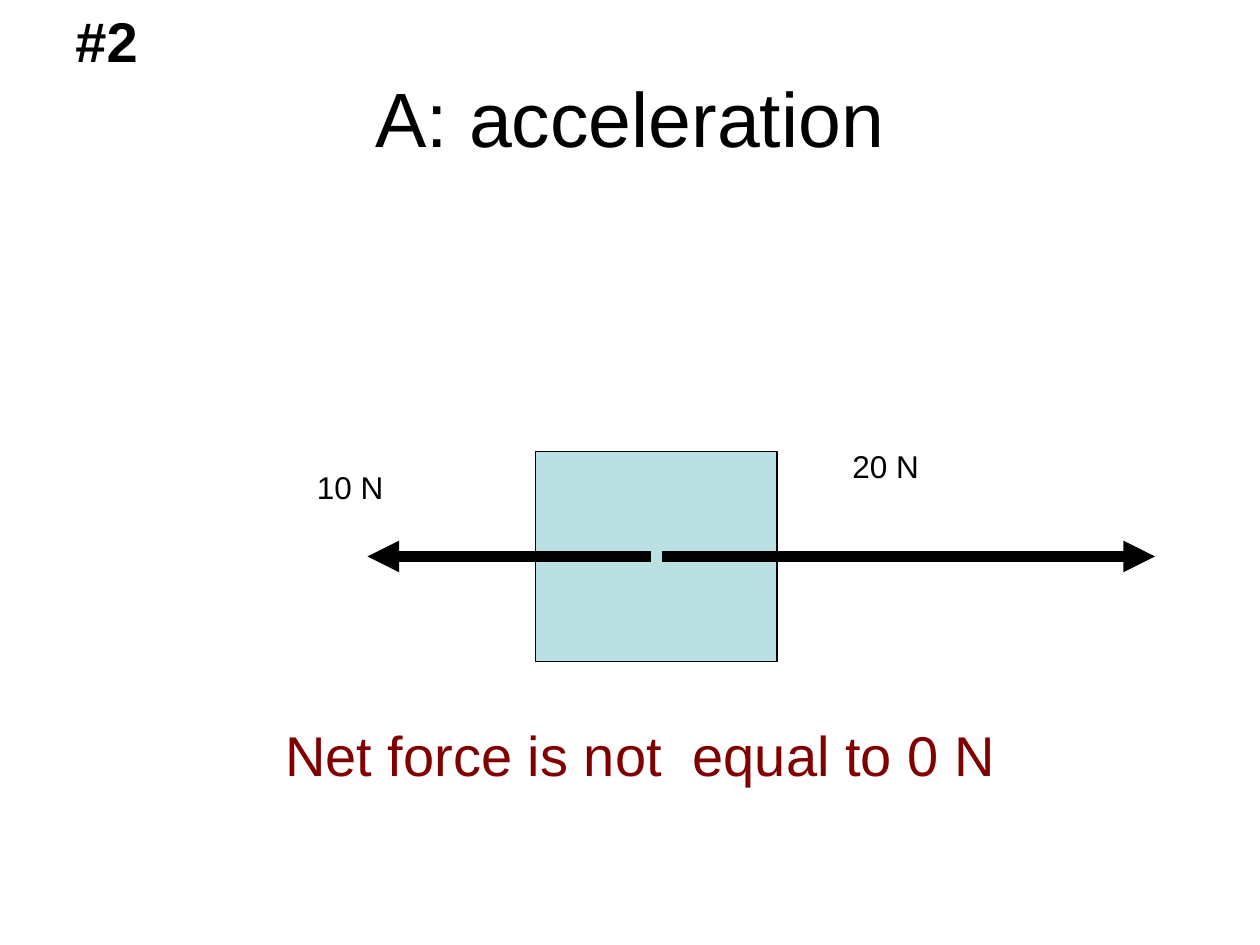
from lxml.etree import SubElement
from pptx import Presentation
from pptx.dml.color import RGBColor as Rgb
from pptx.enum.shapes import MSO_CONNECTOR as Conn, MSO_SHAPE as Shape
from pptx.enum.text import MSO_ANCHOR as Anchor, PP_ALIGN as Align
from pptx.oxml.ns import qn
from pptx.util import Inches, Pt

WIDE, HIGH = Inches(10), Inches(7.5)
COLS, ROWS = 120, 90


def grid(*spans):
    units = (WIDE / COLS, HIGH / ROWS)
    return [round(span * units[i % 2]) for i, span in enumerate(spans)]


def paint(part, color):
    part.solid()
    part.fore_color.rgb = Rgb.from_string(color)


def style(item, form):
    for name, value in form.items():
        setattr(item, name, value)


def write(slide, box, text, size, color="000000", bold=False, lead=0.1,
          align=Align.LEFT, anchor=Anchor.TOP):
    frame = slide.shapes.add_textbox(*grid(*box)).text_frame
    style(frame, {"word_wrap": True, "vertical_anchor": anchor})
    para = frame.paragraphs[0]
    style(para, {"alignment": align, "space_before": Pt(size * lead)})
    run = para.add_run()
    run.text = text
    style(run.font, {"name": "Arial", "size": Pt(size), "bold": bold})
    paint(run.font.fill, color)


def arrow(slide, start, end):
    line = slide.shapes.add_connector(Conn.STRAIGHT, *grid(*start, *end))
    line.line.width = Pt(6)
    paint(line.line.fill, "000000")
    SubElement(line.line._get_or_add_ln(), qn("a:tailEnd"), type="triangle")
    SubElement(line._element.spPr, qn("a:effectLst"))


def header(slide, box):
    left, top, width, height = box
    write(slide, (left, top, 14, 7.5), "#2", 32, bold=True)
    write(slide, (left, top + 3.6, width, height - 3.6), "A: acceleration", 44,
          lead=0, align=Align.CENTER, anchor=Anchor.MIDDLE)


def forces(slide, box):
    left, top, width, height = box
    block = slide.shapes.add_shape(
        Shape.RECTANGLE, *grid(left + 22, top + 1, 23, height - 1))
    block.shadow.inherit = False
    paint(block.fill, "BBE0E3")
    paint(block.line.fill, "000000")
    block.line.width = Pt(0.75)
    axis = top + 11
    arrow(slide, (left + 34, axis), (left + width, axis))
    arrow(slide, (left + 33, axis), (left + 6, axis))
    for text, col, row in (("10 N", 0, 2), ("20 N", 51, 0)):
        write(slide, (left + col, top + row, 13, 4.8), text, 18)


def verdict(slide, box):
    write(slide, box, "Net force is not  equal to 0 N", 32, "800000")


def main():
    deck = Presentation()
    style(deck, {"slide_width": WIDE, "slide_height": HIGH})
    slide = deck.slides.add_slide(deck.slide_layouts[6])
    header(slide, (6, 0, 108, 18.6))
    forces(slide, (29, 42, 81, 21))
    verdict(slide, (26, 68, 74, 7.5))
    deck.save("out.pptx")


if __name__ == "__main__":
    main()
